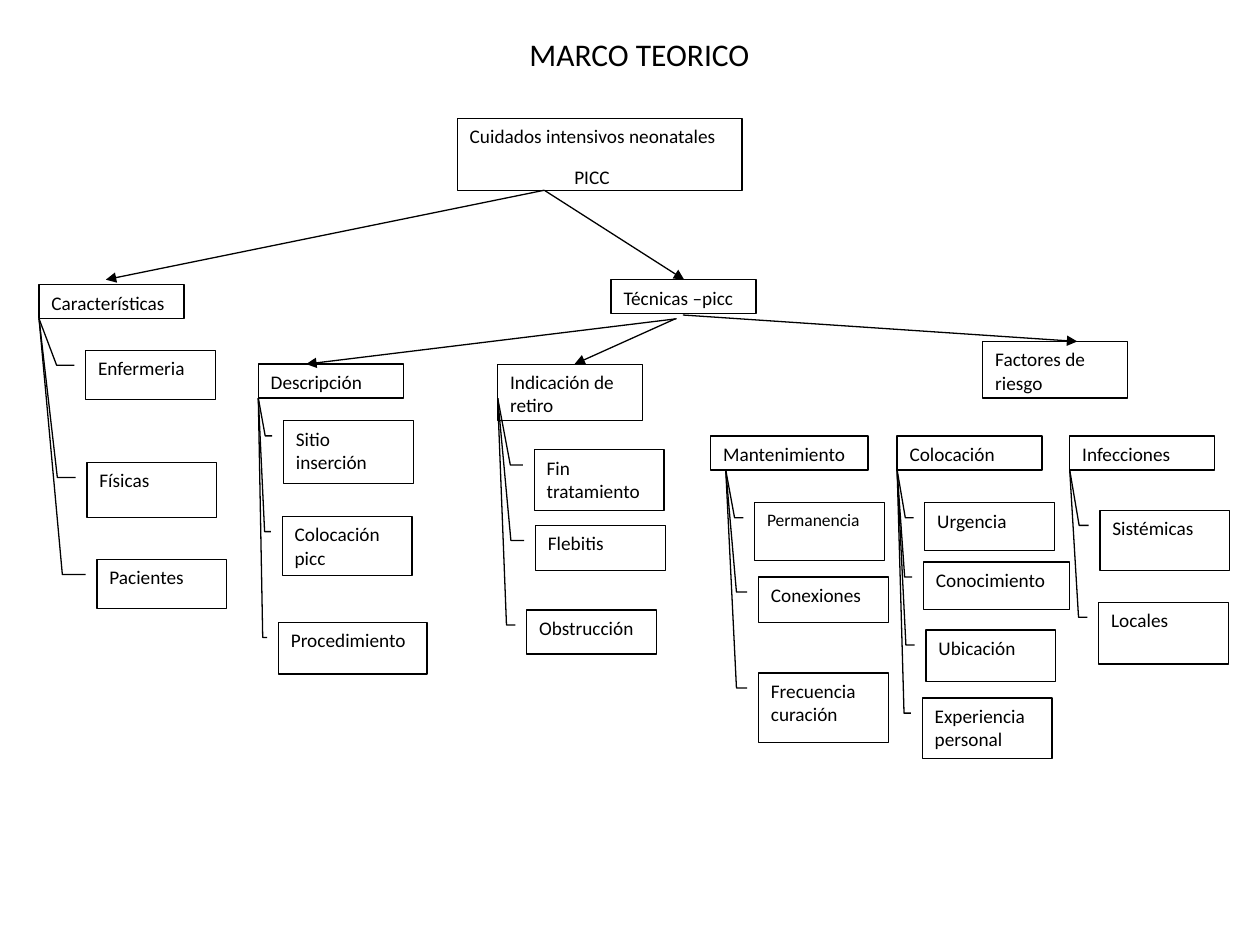
from lxml.etree import SubElement
from pptx import Presentation
from pptx.dml.color import RGBColor
from pptx.enum.shapes import MSO_CONNECTOR, MSO_SHAPE
from pptx.enum.text import MSO_ANCHOR, PP_ALIGN
from pptx.oxml.ns import qn
from pptx.util import Inches, Pt

COLORS = {"ink": "000000", "paper": "FFFFFF"}
FONT = "Calibri"
LINE_WIDTH = Pt(0.75)
LEADER_GAP = 0.09
LEADER_DROP = 0.12

# Heading, its box (left, top, width, height)
HEADINGS = [
    ("Características", (0.31, 2.26, 1.15, 0.27)),
    ("Técnicas –picc", (4.85, 2.22, 1.15, 0.27)),
    ("Descripción", (2.05, 2.89, 1.15, 0.27)),
    ("Indicación de retiro", (3.95, 2.89, 1.15, 0.45)),
    ("Factores de riesgo", (7.8, 2.71, 1.15, 0.45)),
    ("Mantenimiento", (5.64, 3.46, 1.25, 0.27)),
    ("Colocación", (7.12, 3.46, 1.15, 0.27)),
    ("Infecciones", (8.49, 3.46, 1.15, 0.27)),
]

# Point where the leaders of a branch meet, and the items of that branch
BRANCHES = [
    ((0.31, 2.53), [
        ("Enfermeria", (0.68, 2.78, 1.03, 0.39)),
        ("Físicas", (0.69, 3.67, 1.03, 0.44)),
        ("Pacientes", (0.77, 4.44, 1.03, 0.39))]),
    ((2.05, 3.16), [
        ("Sitio inserción", (2.25, 3.34, 1.03, 0.5)),
        ("Colocación picc", (2.24, 4.1, 1.03, 0.47)),
        ("Procedimiento", (2.21, 4.94, 1.18, 0.41))]),
    ((3.95, 3.16), [
        ("Fin tratamiento", (4.24, 3.57, 1.03, 0.48)),
        ("Flebitis", (4.25, 4.17, 1.03, 0.36)),
        ("Obstrucción", (4.18, 4.84, 1.03, 0.35))]),
    ((5.76, 3.73), [
        ("Permanencia", (5.99, 3.99, 1.03, 0.46)),
        ("Conexiones", (6.02, 4.58, 1.03, 0.36)),
        ("Frecuencia curación", (6.02, 5.34, 1.03, 0.55))]),
    ((7.12, 3.73), [
        ("Urgencia", (7.34, 3.99, 1.03, 0.38)),
        ("Conocimiento", (7.33, 4.46, 1.16, 0.38)),
        ("Ubicación", (7.35, 5, 1.03, 0.41)),
        ("Experiencia personal", (7.32, 5.54, 1.03, 0.48))]),
    ((8.49, 3.73), [
        ("Sistémicas", (8.73, 4.05, 1.03, 0.48)),
        ("Locales", (8.72, 4.78, 1.03, 0.49))]),
]
SMALLER_ITEMS = {"Permanencia": 10}

ARROWS = [
    ((4.32, 1.51), (0.84, 2.22)),
    ((4.32, 1.51), (5.43, 2.22)),
    ((5.37, 2.53), (2.43, 2.89)),
    ((5.36, 2.53), (4.56, 2.89)),
    ((5.42, 2.5), (8.55, 2.71)),
]


def color(name):
    return RGBColor.from_string(COLORS[name])


def write(paragraph, text, size=11, align=PP_ALIGN.LEFT, after=10, indent=0):
    paragraph.alignment = align
    paragraph.space_after = Pt(after)
    if indent:
        properties = paragraph._p.get_or_add_pPr()
        properties.set("marL", str(Inches(indent)))
        properties.set("indent", "0")
    run = paragraph.add_run()
    run.text = text
    run.font.name = FONT
    run.font.size = Pt(size)
    run.font.color.rgb = color("ink")


def add_box(slide, text, bounds, preset=MSO_SHAPE.RECTANGLE, size=11):
    box = slide.shapes.add_shape(preset, *map(Inches, bounds))
    box.shadow.inherit = False
    box.fill.solid()
    box.fill.fore_color.rgb = color("paper")
    box.line.color.rgb = color("ink")
    box.line.width = LINE_WIDTH
    frame = box.text_frame
    frame.word_wrap = True
    frame.vertical_anchor = MSO_ANCHOR.TOP
    write(frame.paragraphs[0], text, size=size)
    return box


def add_item(slide, text, bounds, anchor):
    """Box with a bent leader that runs from its left side to the anchor."""
    left, top, width, height = bounds
    item = add_box(slide, text, bounds, MSO_SHAPE.LINE_CALLOUT_2,
                   SMALLER_ITEMS.get(text, 11))
    start_x = -LEADER_GAP / width
    start_y = LEADER_DROP / height
    end_x = (anchor[0] - left) / width
    end_y = (anchor[1] - top) / height
    leader = (start_y, start_x, start_y, (start_x + end_x) / 2, end_y, end_x)
    for index, value in enumerate(leader):
        item.adjustments[index] = value


def add_arrow(slide, start, end):
    arrow = slide.shapes.add_connector(
        MSO_CONNECTOR.STRAIGHT, *map(Inches, start + end))
    arrow.line.color.rgb = color("ink")
    arrow.line.width = LINE_WIDTH
    SubElement(arrow.line._get_or_add_ln(), qn("a:tailEnd"), type="triangle")
    SubElement(arrow._element.spPr, qn("a:effectLst"))


def add_title(slide, text):
    title = slide.shapes.add_textbox(
        Inches(0.7), Inches(0.23), Inches(8.75), Inches(0.4))
    title.text_frame.word_wrap = True
    write(title.text_frame.paragraphs[0], text, size=18,
          align=PP_ALIGN.CENTER, after=0)


def main():
    deck = Presentation()
    deck.slide_width, deck.slide_height = Inches(10), Inches(7.5)
    slide = deck.slides.add_slide(deck.slide_layouts[6])

    root = add_box(slide, "Cuidados intensivos neonatales",
                   (3.63, 0.94, 2.26, 0.57))
    write(root.text_frame.add_paragraph(), "PICC", indent=0.83)
    for text, bounds in HEADINGS:
        add_box(slide, text, bounds)
    for start, end in ARROWS:
        add_arrow(slide, start, end)
    for anchor, items in BRANCHES:
        for text, bounds in items:
            add_item(slide, text, bounds, anchor)
    add_title(slide, "MARCO TEORICO")

    deck.save("out.pptx")


if __name__ == "__main__":
    main()
